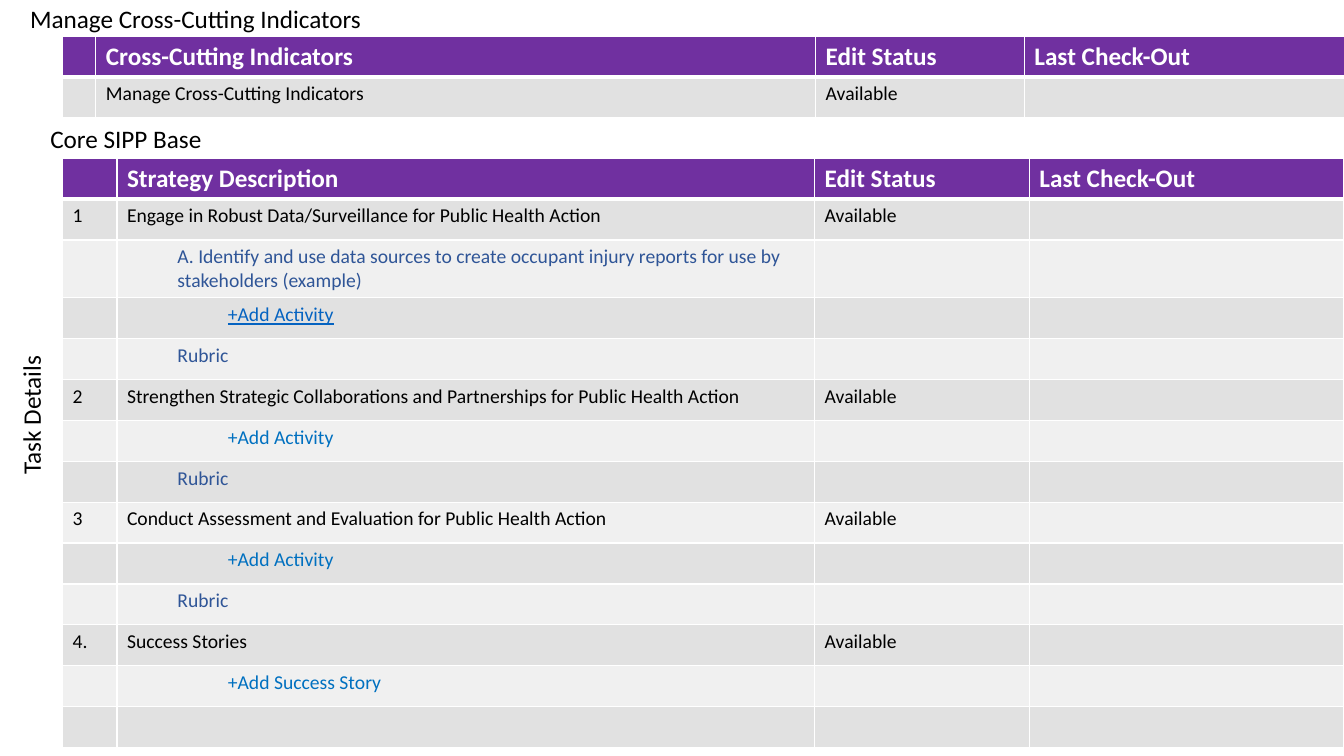
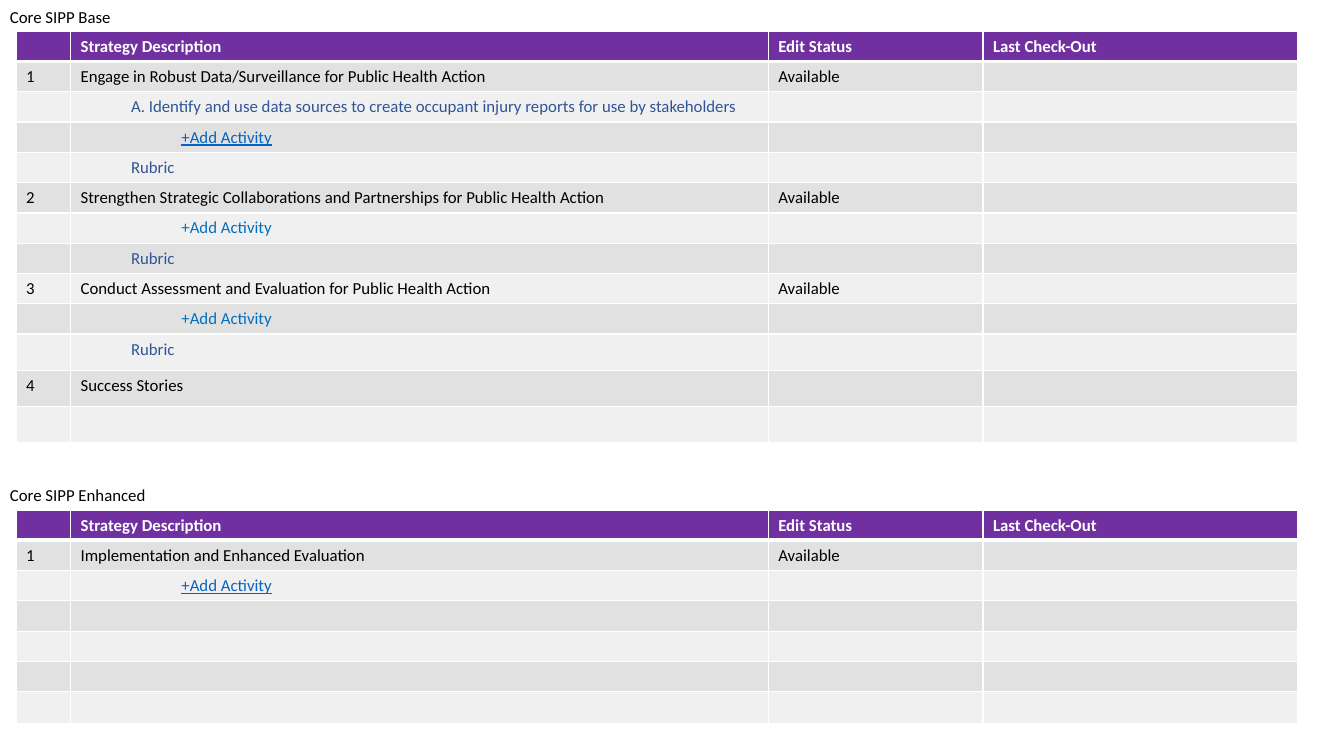
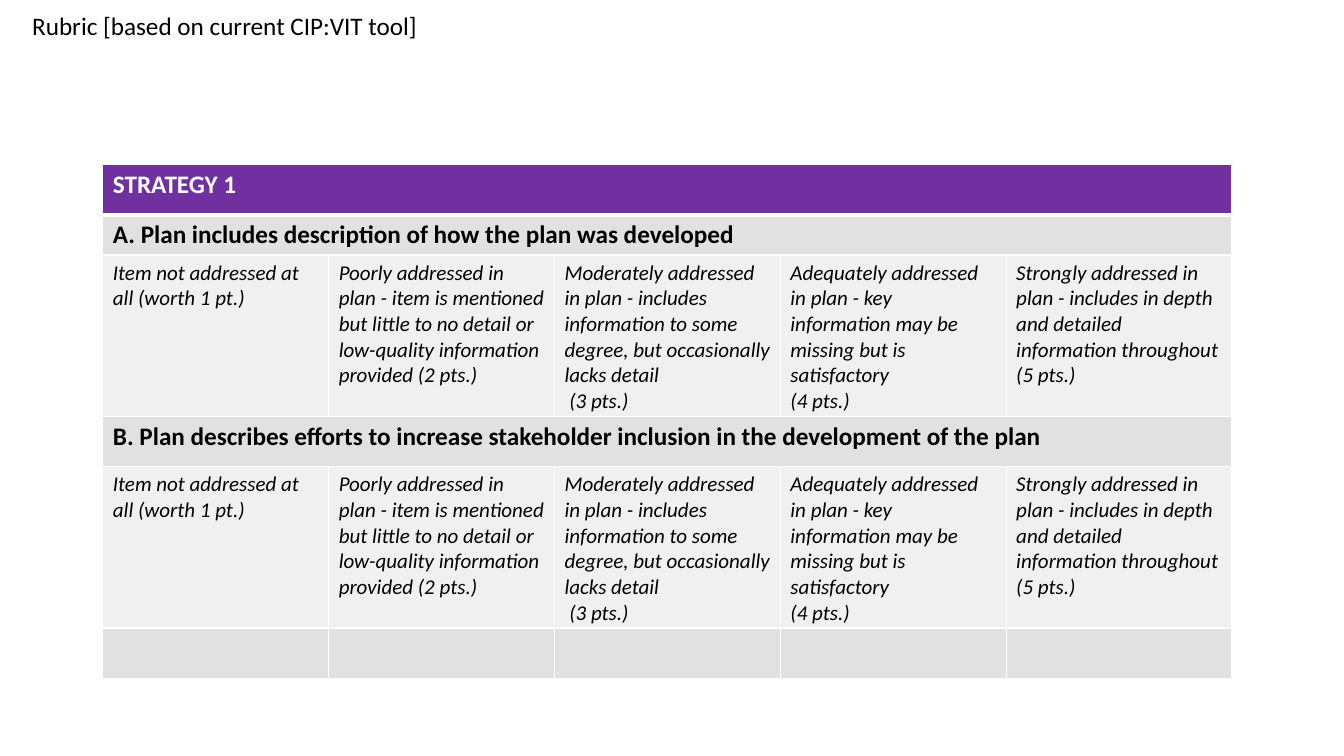
from dataclasses import dataclass

from pptx import Presentation
from pptx.dml.color import RGBColor
from pptx.enum.text import MSO_AUTO_SIZE as AutoSize
from pptx.oxml.ns import qn
from pptx.util import Inches, Pt
from lxml.etree import SubElement

FONT = "Calibri"
COLORS = {
    "white": "FFFFFF",
    "black": "000000",
    "header": "7030A0",
    "odd": "E1E1E1",
    "even": "F0F0F0",
    "detail": "2F5597",
    "link": "0563C1",
    "action": "0070C0",
}


@dataclass
class TextStyle:
    color: str = "black"
    bold: bool = False
    italic: bool = False
    underline: bool = False
    level: int = 0


STYLES = {
    "header": TextStyle("white", bold=True),
    "body": TextStyle(),
    "detail": TextStyle("detail", level=1),
    "link": TextStyle("link", underline=True, level=2),
    "action": TextStyle("action", level=2),
    "criterion": TextStyle(bold=True),
    "rating": TextStyle(italic=True),
}


class Deck:
    def __init__(self):
        self.presentation = Presentation()
        self.presentation.slide_width = Inches(13.33)
        self.presentation.slide_height = Inches(7.5)
        self.slide = None

    def new_slide(self):
        layout = self.presentation.slide_layouts[6]
        self.slide = self.presentation.slides.add_slide(layout)

    def add_run(self, paragraph, text, style, size):
        run = paragraph.add_run()
        run.text = text
        font = run.font
        font.name = FONT
        font.size = Pt(size)
        font.bold = style.bold
        font.italic = style.italic
        font.underline = style.underline
        font.color.rgb = RGBColor.from_string(COLORS[style.color])

    def label(self, text, left, top, width, height, size=18, rotation=0, wrap=False):
        shape = self.slide.shapes.add_textbox(
            Inches(left), Inches(top), Inches(width), Inches(height))
        shape.rotation = rotation
        frame = shape.text_frame
        frame.word_wrap = wrap
        frame.auto_size = AutoSize.SHAPE_TO_FIT_TEXT
        self.add_run(frame.paragraphs[0], text, STYLES["body"], size)

    def table(self, left, top, widths, heights, rows, header_size, body_size):
        shape = self.slide.shapes.add_table(
            len(rows), len(widths), Inches(left), Inches(top),
            Inches(sum(widths)), Inches(sum(heights)))
        table = shape.table
        table.first_row = table.horz_banding = False
        for column, width in zip(table.columns, widths):
            column.width = Inches(width)
        for index, (height, row) in enumerate(zip(heights, rows)):
            table.rows[index].height = Inches(height)
            band = "header" if index == 0 else "odd" if index % 2 else "even"
            for position in range(len(widths)):
                cell = table.cell(index, position)
                self.borders(cell, index)
                cell.fill.solid()
                cell.fill.fore_color.rgb = RGBColor.from_string(COLORS[band])
                style, text = row[position] if position < len(row) else ("body", "")
                self.cell_text(cell, text, STYLES[style], header_size, body_size)
            if len(row) == 1:
                table.cell(index, 0).merge(table.cell(index, len(widths) - 1))

    def cell_text(self, cell, text, style, header_size, body_size):
        frame = cell.text_frame
        if not text:
            end = SubElement(frame.paragraphs[0]._p, qn("a:endParaRPr"))
            end.set("sz", str(header_size * 100))
            return
        for number, line in enumerate(text.split("\n")):
            paragraph = frame.add_paragraph() if number else frame.paragraphs[0]
            if style.level:
                paragraph.level = style.level
                properties = paragraph._p.get_or_add_pPr()
                properties.set("marL", str(Inches(0.5 * style.level)))
                properties.set("indent", "0")
            self.add_run(paragraph, line, style, header_size if style.bold else body_size)

    def borders(self, cell, row_index):
        properties = cell._tc.get_or_add_tcPr()
        thick_side = {0: "lnB", 1: "lnT"}.get(row_index)
        for side in ("lnL", "lnR", "lnT", "lnB"):
            line = SubElement(properties, qn(f"a:{side}"))
            line.set("w", str(Pt(3 if side == thick_side else 1)))
            fill = SubElement(line, qn("a:solidFill"))
            SubElement(fill, qn("a:srgbClr")).set("val", COLORS["white"])


def status_header(title):
    return [("header", text) for text in ("", title, "Edit Status", "Last Check-Out")]


def entry(text="", style="body", number="", status=""):
    return [("body", number), (style, text), ("body", status), ("body", "")]


def strategy(number, text, status="Available"):
    return entry(text, number=number, status=status)


STRATEGY_WIDTHS = [0.54, 6.92, 2.13, 3.12]
STRATEGY_HEADER = status_header("Strategy Description")
ADD_LINK = entry("+Add Activity", "link")
ADD_ACTIVITY = entry("+Add Activity", "action")
RUBRIC = entry("Rubric", "detail")
DATA_SOURCES = ("A. Identify and use data sources to create occupant injury "
                "reports for use by stakeholders")
RATINGS = [("rating", text) for text in (
    "Item not addressed at all (worth 1 pt.)",
    "Poorly addressed in plan - item is mentioned but little to no detail or "
    "low-quality information provided (2 pts.)",
    "Moderately addressed in plan - includes information to some degree, but "
    "occasionally lacks detail\n (3 pts.)",
    "Adequately addressed in plan - key information may be missing but is "
    "satisfactory\n(4 pts.)",
    "Strongly addressed in plan - includes in depth and detailed information "
    "throughout (5 pts.)",
)]


def base_rows(example, closing_rows):
    return [
        STRATEGY_HEADER,
        strategy("1", "Engage in Robust Data/Surveillance for Public Health Action"),
        entry(DATA_SOURCES + example, "detail"),
        ADD_LINK,
        RUBRIC,
        strategy("2", "Strengthen Strategic Collaborations and Partnerships "
                      "for Public Health Action"),
        ADD_ACTIVITY,
        RUBRIC,
        strategy("3", "Conduct Assessment and Evaluation for Public Health Action"),
        ADD_ACTIVITY,
        RUBRIC,
        *closing_rows,
    ]


def task_details(deck):
    deck.new_slide()
    indicators = [status_header("Cross-Cutting Indicators"),
                  entry("Manage Cross-Cutting Indicators", status="Available")]
    deck.table(0.62, 0.36, [0.33, 7.14, 2.07, 3.18], [0.4] * 2, indicators, 18, 14)
    rows = base_rows(" (example)", [
        strategy("4.", "Success Stories"),
        entry("+Add Success Story", "action"),
        entry(),
    ])
    heights = [0.4] * 2 + [0.57] + [0.4] * 11
    deck.table(0.62, 1.57, STRATEGY_WIDTHS, heights, rows, 18, 14)
    deck.label("Manage Cross-Cutting Indicators", 0.2, -0.02, 3.53, 0.4)
    deck.label("Core SIPP Base", 0.4, 1.17, 1.72, 0.4)
    deck.label("Task Details", -0.39, 3.91, 1.39, 0.4, rotation=270)


def base_and_enhanced(deck):
    deck.new_slide()
    rows = base_rows("", [strategy("4", "Success Stories", ""), entry()])
    deck.table(0.16, 0.31, STRATEGY_WIDTHS, [0.3] * 10 + [0.36] * 3, rows, 12, 12)
    deck.label("Core SIPP Base", 0, 0.02, 1.25, 0.3, size=12)
    deck.label("Core SIPP Enhanced", 0, 4.76, 1.6, 0.3, size=12)
    enhanced = [STRATEGY_HEADER,
                strategy("1", "Implementation and Enhanced Evaluation"),
                ADD_LINK] + [entry()] * 4
    deck.table(0.16, 5.06, STRATEGY_WIDTHS, [0.3] * 6 + [0.32], enhanced, 12, 12)


def rubric(deck):
    deck.new_slide()
    rows = [
        [("header", "STRATEGY 1")],
        [("criterion", "A. Plan includes description of how the plan was developed")],
        RATINGS,
        [("criterion", "B. Plan describes efforts to increase stakeholder inclusion "
                       "in the development of the plan")],
        RATINGS,
        [("body", "")] * 5,
    ]
    deck.table(1.02, 1.63, [2.24] * 5, [0.5, 0.4, 1.6, 0.5, 1.6, 0.5], rows, 18, 15)
    deck.label("Rubric [based on current CIP:VIT tool]", 0.22, 0.05, 5.71, 0.4, wrap=True)


def main():
    deck = Deck()
    task_details(deck)
    base_and_enhanced(deck)
    rubric(deck)
    deck.presentation.save("out.pptx")


if __name__ == "__main__":
    main()
